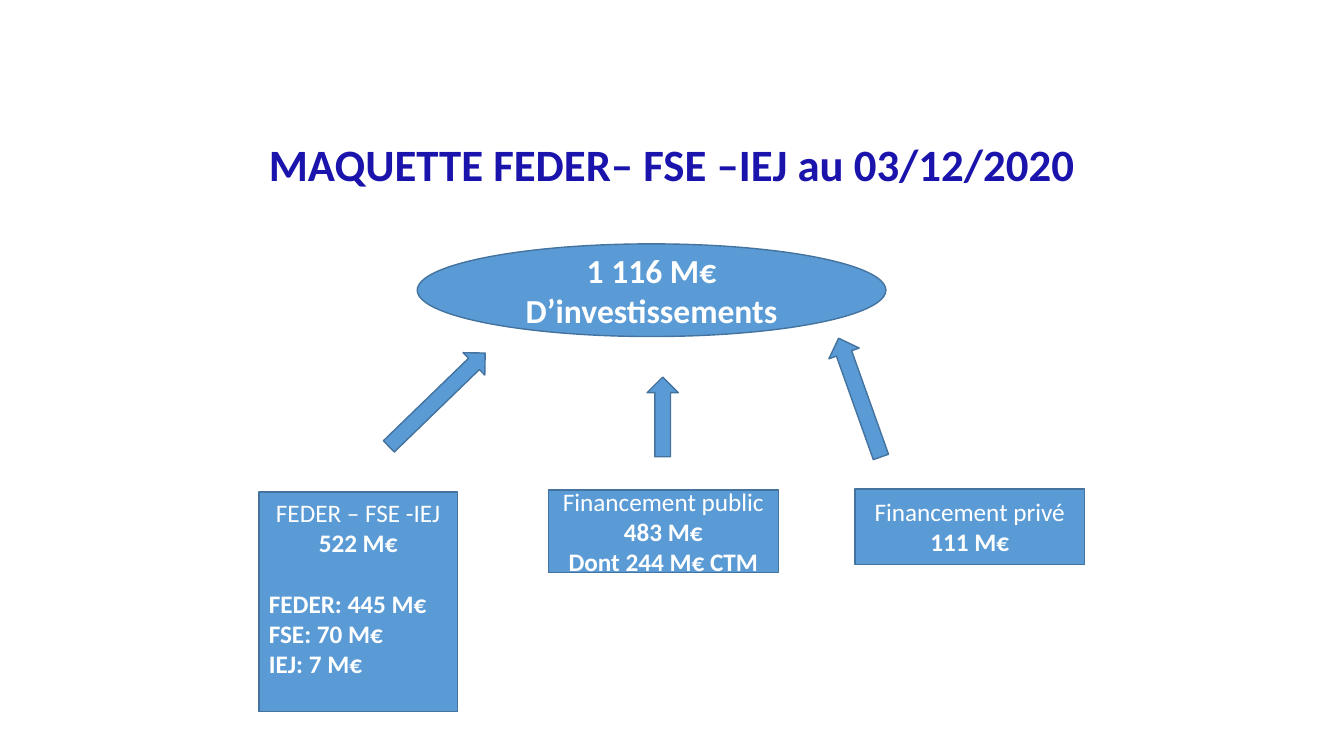
"""Builds the FEDER – FSE – IEJ funding slide."""
from pptx import Presentation
from pptx.dml.color import RGBColor
from pptx.enum.shapes import MSO_SHAPE as Shape
from pptx.enum.text import MSO_ANCHOR as Anchor, PP_ALIGN as Align
from pptx.util import Pt

BLUE, EDGE, WHITE, NAVY = "5B9BD5", "43739E", "FFFFFF", "1B14AC"

TITLE = "MAQUETTE FEDER– FSE –IEJ au 03/12/2020"
TITLE_BOX = (66, 92, 828, 50)
TOTAL = ["1 116 M€", "D’investissements"]
TOTAL_BOX = (298, 174.2, 334.8, 66.2)
ARROWS = [
    ((301, 237.6, 22.3, 95.8), 225.9),
    ((462.2, 269.3, 22.3, 56.9), 180),
    ((602.6, 239, 23, 90), 160.4),
]
SOURCES = [
    ((185, 351.4, 141.8, 157), Anchor.TOP, "FEDER – FSE -IEJ", ["522 M€"],
     ["FEDER: 445 M€", "FSE: 70 M€", "IEJ: 7 M€"]),
    ((391.7, 349.9, 164.2, 59), Anchor.MIDDLE, "Financement public",
     ["483 M€", "Dont 244 M€ CTM"], []),
    ((610.6, 349.2, 164.2, 54), Anchor.MIDDLE, "Financement privé", ["111 M€"], []),
]


def color(value):
    return RGBColor.from_string(value)


def add_block(page, kind, box, turn=0):
    shape = page.shapes.add_shape(kind, *map(Pt, box))
    shape.shadow.inherit = False
    shape.fill.solid()
    shape.fill.fore_color.rgb = color(BLUE)
    shape.line.color.rgb = color(EDGE)
    shape.line.width = Pt(1)
    shape.rotation = turn
    return shape


def write(shape, lines, size, tint=WHITE, anchor=Anchor.MIDDLE):
    frame = shape.text_frame
    frame.word_wrap = True
    frame.vertical_anchor = anchor
    for index, (text, bold, align, gap) in enumerate(lines):
        para = frame.paragraphs[0] if index == 0 else frame.add_paragraph()
        para.alignment = align
        if gap:
            para.space_before = Pt(gap)
        span = para.add_run()
        span.text = text
        span.font.name = "Calibri"
        span.font.size = Pt(size)
        span.font.bold = bold
        span.font.color.rgb = color(tint)


def main():
    deck = Presentation()
    deck.slide_width, deck.slide_height = Pt(960), Pt(540)
    page = deck.slides.add_slide(deck.slide_layouts[6])

    title = page.shapes.add_textbox(*map(Pt, TITLE_BOX))
    write(title, [(TITLE, True, Align.CENTER, 0)], 32, NAVY)

    total = add_block(page, Shape.OVAL, TOTAL_BOX)
    write(total, [(text, True, Align.CENTER, 0) for text in TOTAL], 24)

    for box, turn in ARROWS:
        add_block(page, Shape.DOWN_ARROW, box, turn)

    for box, anchor, name, amounts, details in SOURCES:
        lines = [(name, False, Align.CENTER, 0)]
        lines += [(text, True, Align.CENTER, 0) for text in amounts]
        lines += [(text, True, Align.LEFT, 0 if index else 22)
                  for index, text in enumerate(details)]
        write(add_block(page, Shape.RECTANGLE, box), lines, 18, anchor=anchor)

    deck.save("out.pptx")


if __name__ == "__main__":
    main()
